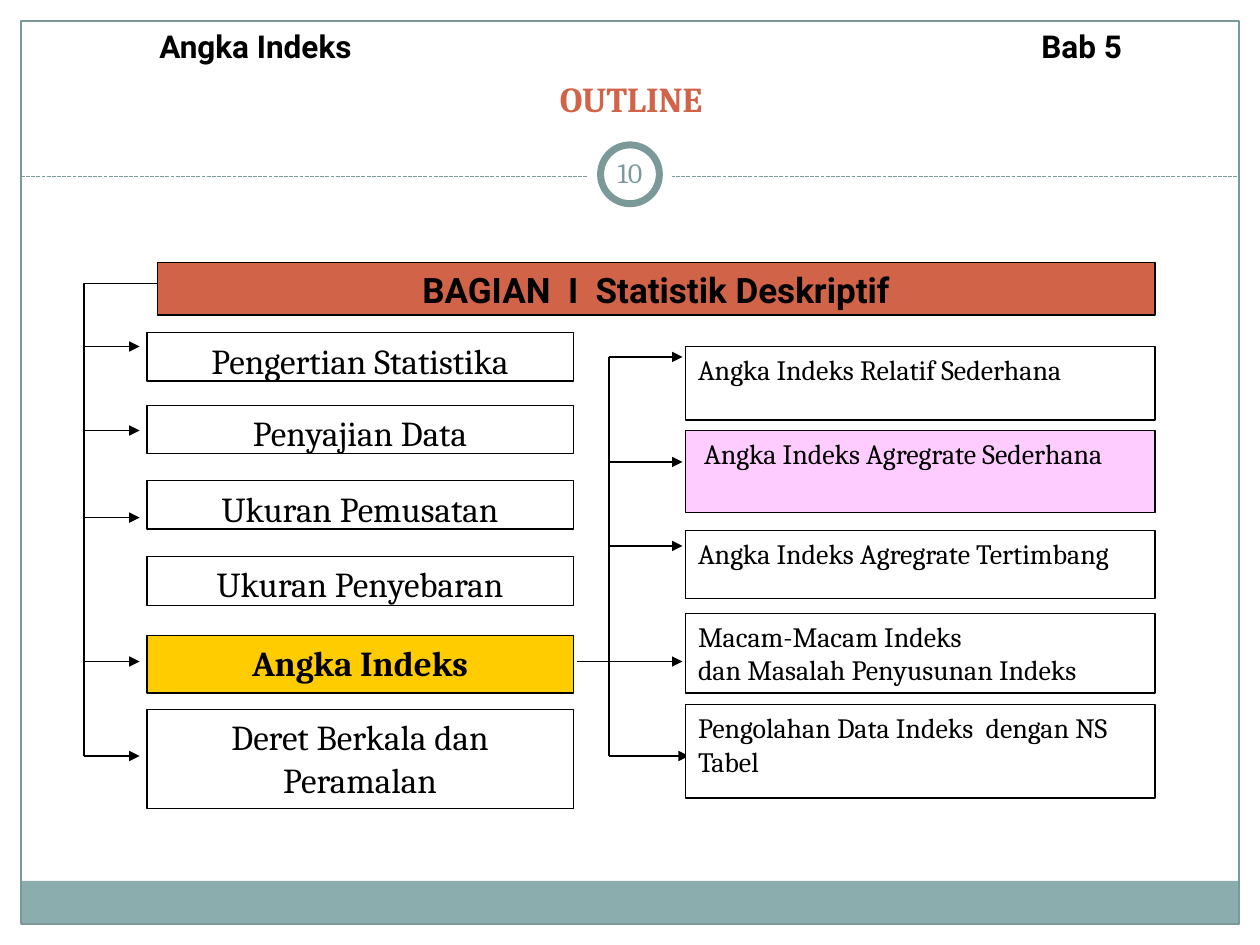
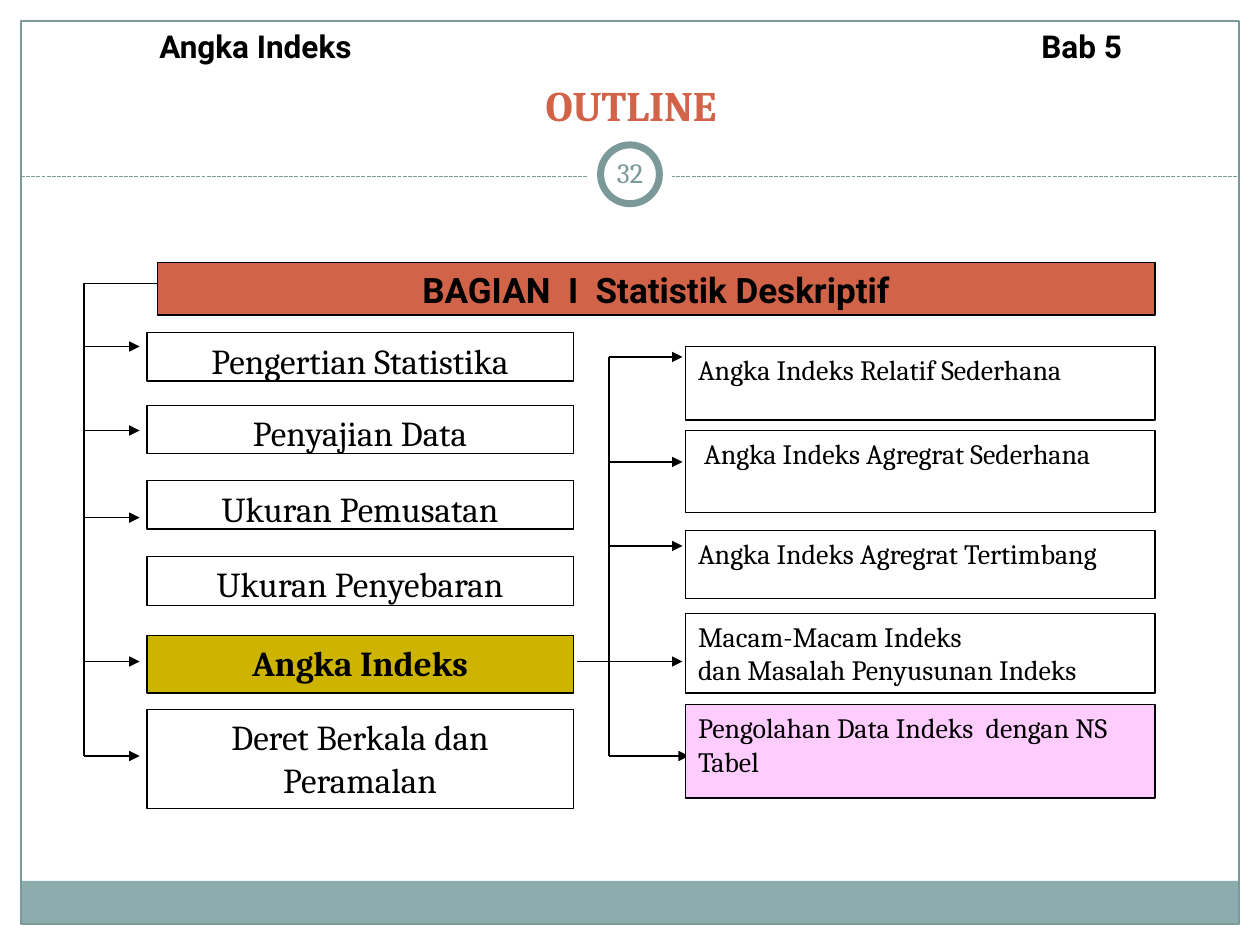
"""Build two outline slides for the chapter on index numbers."""
from dataclasses import dataclass

from lxml.etree import SubElement
from pptx import Presentation
from pptx.dml.color import RGBColor
from pptx.enum.dml import MSO_LINE_DASH_STYLE as Dash
from pptx.enum.shapes import MSO_CONNECTOR as Connector, MSO_SHAPE as Shape
from pptx.enum.text import MSO_ANCHOR as Anchor, MSO_AUTO_SIZE as AutoSize, PP_ALIGN as Align
from pptx.oxml.ns import qn
from pptx.util import Inches, Pt


@dataclass(frozen=True)
class Theme:
    """Colours, fonts and type sizes of the deck."""
    ink: str = "000000"
    paper: str = "FFFFFF"
    accent: str = "D16349"
    frame: str = "7C999A"
    footer: str = "8CADAE"
    gold: str = "FFCC00"
    olive: str = "CCB400"
    pink: str = "FFCCFF"
    serif: str = "Cambria"
    sans: str = "Roboto"
    topic: int = 20
    header: int = 18
    detail: int = 16
    thin: float = 0.75
    ring: float = 4


THEME = Theme()
COLUMNS, ROWS = 120, 90
WIDTH, HEIGHT = Inches(10), Inches(7.5)

LEFT_TRUNK, RIGHT_TRUNK = 8, 58
TRUNK_TOP, TRUNK_BOTTOM = 27, 72
TOPIC_LEFT, TOPIC_WIDTH = 14, 40.6
DETAIL_LEFT, DETAIL_WIDTH = 65.3, 44.7
TOPIC_ARROWS = (33, 41, 49.3, 63, 72)
DETAIL_ARROWS = ((34, 65), (44, 65), (52, 65), (63, 65), (72, 65.6))
CURRENT_TOPIC = "Angka Indeks"
TOPICS = (
    (31.7, 4.6, ["Pengertian Statistika"]),
    (38.6, 4.6, ["Penyajian Data"]),
    (45.8, 4.6, ["Ukuran Pemusatan"]),
    (53, 4.7, ["Ukuran Penyebaran"]),
    (60.5, 5.5, [CURRENT_TOPIC]),
    (67.6, 9.4, ["Deret Berkala dan", "Peramalan"]),
)
DETAIL_ROWS = ((33, 7), (41, 7.8), (50.5, 6.5), (58.4, 7.6), (67.1, 8.9))


def across(columns):
    """Turn grid columns into a length."""
    return int(WIDTH * columns / COLUMNS)


def down(rows):
    """Turn grid rows into a length."""
    return int(HEIGHT * rows / ROWS)


def area(left, top, width, height):
    """Turn a grid cell range into a position and size."""
    return across(left), down(top), across(width), down(height)


def colour(code):
    """Read a colour code."""
    return RGBColor.from_string(code)


def write(frame, lines, size, ink=THEME.ink, font=THEME.serif, bold=False, align=Align.LEFT):
    """Write one paragraph per line into a text frame."""
    frame.word_wrap = True
    for index, line in enumerate(lines):
        para = frame.add_paragraph() if index else frame.paragraphs[0]
        para.alignment = align
        span = para.add_run()
        span.text = line
        span.font.name = font
        span.font.size = Pt(size)
        span.font.bold = bold
        span.font.color.rgb = colour(ink)


def paint(shape, fill=None, line=None, weight=THEME.thin):
    """Set the fill and outline of a shape and drop its shadow."""
    shape.shadow.inherit = False
    if fill:
        shape.fill.solid()
        shape.fill.fore_color.rgb = colour(fill)
    else:
        shape.fill.background()
    if line:
        shape.line.color.rgb = colour(line)
        shape.line.width = Pt(weight)
    else:
        shape.line.fill.background()


def add_figure(page, kind, place, **style):
    """Add a painted preset shape."""
    shape = page.shapes.add_shape(kind, *area(*place))
    paint(shape, **style)
    return shape


def add_box(page, place, lines, size, fill=THEME.paper, **style):
    """Add an outlined box with text at its top."""
    box = add_figure(page, Shape.RECTANGLE, place, fill=fill, line=THEME.ink)
    box.text_frame.vertical_anchor = Anchor.TOP
    write(box.text_frame, lines, size, **style)


def add_line(page, start, end, ink=THEME.ink, arrow=False):
    """Add a thin straight line, with an arrowhead if wanted."""
    line = page.shapes.add_connector(
        Connector.STRAIGHT, across(start[0]), down(start[1]), across(end[0]), down(end[1]))
    line.line.color.rgb = colour(ink)
    line.line.width = Pt(THEME.thin)
    if arrow:
        SubElement(line.line._get_or_add_ln(), qn("a:tailEnd"), type="triangle")
    SubElement(line.element.spPr, qn("a:effectLst"))
    return line


def add_frame(layout, page):
    """Draw the border, footer band and number ring and hand them to the layout."""
    rule = add_line(page, (2, 16.8), (118, 16.8), THEME.frame)
    rule.line.dash_style = Dash.SQUARE_DOT
    parts = (
        add_figure(page, Shape.RECTANGLE, (2, 83.9, 116, 4.1), fill=THEME.footer),
        add_figure(page, Shape.RECTANGLE, (2, 2, 116, 86), line=THEME.frame),
        rule,
        add_figure(page, Shape.OVAL, (56, 12.6, 8, 8), fill=THEME.paper),
        add_figure(page, Shape.OVAL, (57.2, 13.8, 5.6, 5.6),
                   fill=THEME.paper, line=THEME.frame, weight=THEME.ring),
    )
    for part in parts:
        layout.shapes.element.append(part.element)


def add_heading(page, number, title_top, title_height, title_size):
    """Fill in the title, the page number and the chapter line."""
    title = page.shapes.title
    title.left, title.top, title.width, title.height = area(9, title_top, 102.2, title_height)
    title.text_frame.auto_size = AutoSize.NONE
    title.text_frame.vertical_anchor = Anchor.BOTTOM
    write(title.text_frame, ["OUTLINE"], title_size, THEME.accent, bold=True, align=Align.CENTER)

    frame = page.shapes.add_textbox(*area(57, 13.6, 6, 5.7)).text_frame
    frame.margin_left = frame.margin_right = Inches(0.05)
    frame.vertical_anchor = Anchor.MIDDLE
    write(frame, [str(number)], THEME.detail, THEME.frame, align=Align.CENTER)

    frame = page.shapes.add_textbox(*area(14, 2, 95, 4.8)).text_frame
    write(frame, ["Angka Indeks\tBab 5"], THEME.header, font=THEME.sans, bold=True)
    stops = SubElement(frame.paragraphs[0]._p.get_or_add_pPr(), qn("a:tabLst"))
    SubElement(stops, qn("a:tab"), pos=str(across(84)), algn="l")


def add_arrows(page):
    """Draw the two trunks with their branches."""
    builder = page.shapes.build_freeform(across(15.1), down(TRUNK_TOP))
    builder.add_line_segments(
        [(across(LEFT_TRUNK), down(row)) for row in (TRUNK_TOP, TRUNK_BOTTOM)], close=False)
    paint(builder.convert_to_shape(), line=THEME.ink)
    for row in TOPIC_ARROWS:
        add_line(page, (LEFT_TRUNK, row), (13.3, row), arrow=True)

    add_line(page, (RIGHT_TRUNK, DETAIL_ARROWS[0][0]), (RIGHT_TRUNK, TRUNK_BOTTOM))
    add_line(page, (55, 63), (RIGHT_TRUNK, 63))
    for row, tip in DETAIL_ARROWS:
        add_line(page, (RIGHT_TRUNK, row), (tip, row), arrow=True)


def add_outline(page, spelling, topic_fill, current_detail):
    """Draw the part banner, the topics and the details of the current topic."""
    add_arrows(page)
    add_box(page, (15, 25, 95, 5), ["BAGIAN  I  Statistik Deskriptif"], THEME.topic,
            THEME.accent, font=THEME.sans, bold=True, align=Align.CENTER)
    for top, height, lines in TOPICS:
        current = lines == [CURRENT_TOPIC]
        add_box(page, (TOPIC_LEFT, top, TOPIC_WIDTH, height), lines, THEME.topic,
                topic_fill if current else THEME.paper, bold=current, align=Align.CENTER)
    details = (
        ["Angka Indeks Relatif Sederhana"],
        [f" Angka Indeks {spelling} Sederhana"],
        [f"Angka Indeks {spelling} Tertimbang"],
        ["Macam-Macam Indeks", "dan Masalah Penyusunan Indeks"],
        ["Pengolahan Data Indeks  dengan NS Tabel"],
    )
    for index, ((top, height), lines) in enumerate(zip(DETAIL_ROWS, details)):
        add_box(page, (DETAIL_LEFT, top, DETAIL_WIDTH, height), lines, THEME.detail,
                THEME.pink if index == current_detail else THEME.paper)


def main():
    """Build and save the deck."""
    deck = Presentation()
    deck.slide_width, deck.slide_height = WIDTH, HEIGHT
    layout = deck.slide_layouts[5]

    page = deck.slides.add_slide(layout)
    add_frame(layout, page)
    add_heading(page, 10, title_top=5, title_height=7, title_size=20)
    add_outline(page, "Agregrate", THEME.gold, current_detail=1)

    page = deck.slides.add_slide(layout)
    add_heading(page, 32, title_top=7, title_height=6, title_size=24)
    add_outline(page, "Agregrat", THEME.olive, current_detail=4)

    deck.save("out.pptx")


if __name__ == "__main__":
    main()
